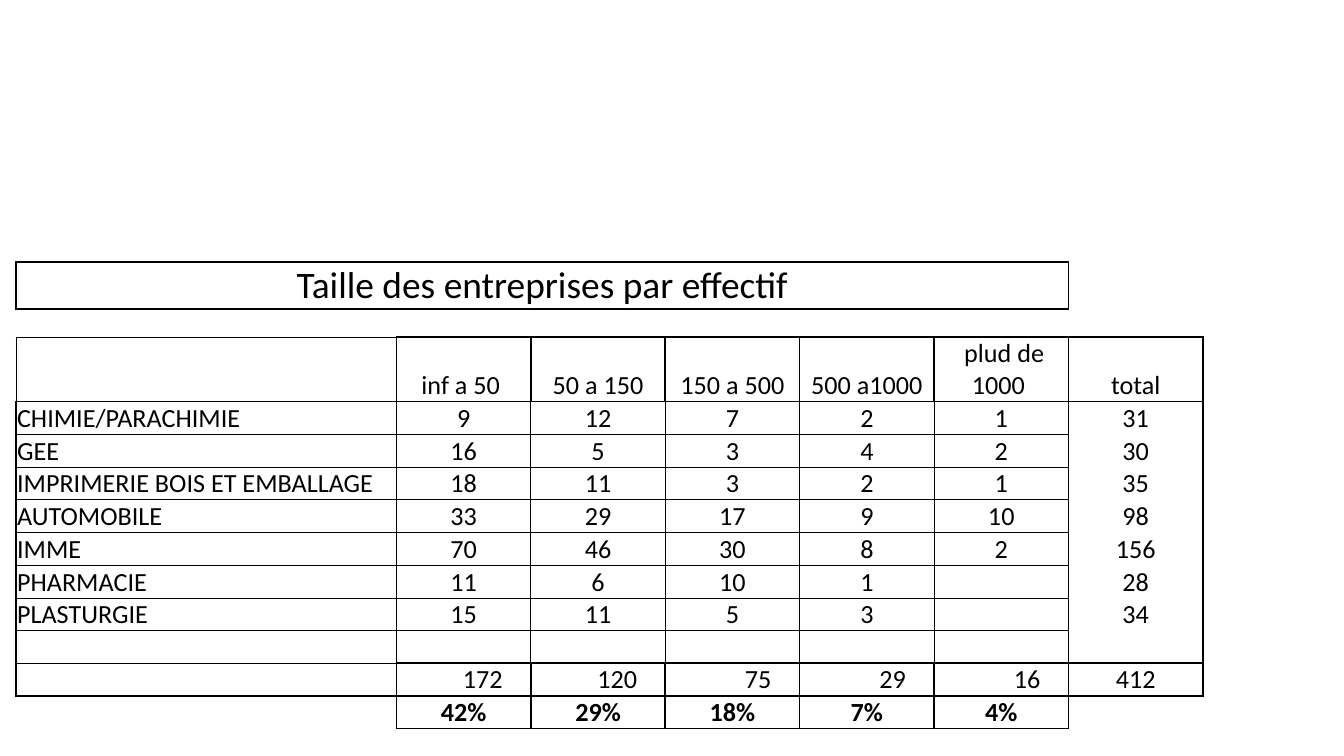
from lxml.etree import SubElement
from pptx import Presentation
from pptx.dml.color import RGBColor
from pptx.enum.text import MSO_ANCHOR, PP_ALIGN
from pptx.oxml.ns import qn
from pptx.util import Inches, Pt

BLACK = RGBColor(0, 0, 0)
THICK, THIN, NONE = 1, 0.5, 0

TITLE = "Taille des entreprises par effectif"
HEADERS = ["", "inf a 50 ", "50 a 150", "150 a 500", "500 a1000", " plud de 1000 ", "total"]
SECTORS = [
    ["CHIMIE/PARACHIMIE", "9", "12", "7", "2", "1", "31"],
    ["GEE", "16", "5", "3", "4", "2", "30"],
    ["IMPRIMERIE BOIS ET EMBALLAGE", "18", "11", "3", "2", "1", "35"],
    ["AUTOMOBILE", "33", "29", "17", "9", "10", "98"],
    ["IMME", "70", "46", "30", "8", "2", "156"],
    ["PHARMACIE", "11", "6", "10", "1", "", "28"],
    ["PLASTURGIE", "15", "11", "5", "3", "", "34"],
]
TOTALS = ["", "172", "120", "75", "29", "16", "412"]
SHARES = ["", "42%", "29%", "18%", "7%", "4%", ""]
EMPTY = [""] * 7
ROWS = [[TITLE] + EMPTY[1:], EMPTY, HEADERS, *SECTORS, EMPTY, TOTALS, SHARES, EMPTY]
TITLE_ROW, HEADER_ROW, TOTALS_ROW, SHARES_ROW = 0, 2, 11, 12
COLUMN_WIDTHS = [2.83] + [1] * 6
ROW_HEIGHTS = [0.34, 0.21, 0.48] + [0.24] * 10 + [0.2]


def vertical_edge(row, edge):
    if row == TITLE_ROW:
        return THICK if edge in (0, 6) else NONE
    if row == HEADER_ROW:
        return THICK if edge else THIN
    if HEADER_ROW < row < TOTALS_ROW:
        return THICK if edge in (0, 6, 7) else THIN
    if row == TOTALS_ROW:
        return THICK
    return THICK if row == SHARES_ROW and 1 <= edge <= 6 else NONE


def horizontal_edge(edge, column):
    if edge <= 1:
        return THICK if column < 6 else NONE
    if edge in (HEADER_ROW, TOTALS_ROW):
        return THICK if column else THIN
    if edge in (HEADER_ROW + 1, SHARES_ROW):
        return THICK
    if edge < TOTALS_ROW:
        return THIN if column < 6 else NONE
    return THICK if edge == SHARES_ROW + 1 and 1 <= column <= 5 else NONE


class SlideBuilder:
    font_name = "Calibri"
    body_size = 14
    title_size = 20
    empty_size = 10

    def __init__(self, presentation):
        self.slide = presentation.slides.add_slide(presentation.slide_layouts[6])

    def add_table(self, left, top, rows):
        shape = self.slide.shapes.add_table(
            len(rows), len(COLUMN_WIDTHS), Inches(left), Inches(top),
            Inches(sum(COLUMN_WIDTHS)), Inches(sum(ROW_HEIGHTS)))
        table = shape.table
        table.first_row = False
        table.horz_banding = False
        for column, width in zip(table.columns, COLUMN_WIDTHS):
            column.width = Inches(width)
        for row, height in zip(table.rows, ROW_HEIGHTS):
            row.height = Inches(height)
        for row, texts in enumerate(rows):
            for column, text in enumerate(texts):
                cell = table.cell(row, column)
                self.style_cell(cell, row, column)
                self.write_cell(cell, text, row, column)
        table.cell(TITLE_ROW, 0).merge(table.cell(TITLE_ROW, 5))

    def style_cell(self, cell, row, column):
        cell.margin_left = cell.margin_right = cell.margin_top = Pt(0.5)
        cell.margin_bottom = 0
        middle = row in (TOTALS_ROW, SHARES_ROW) and column < 6
        cell.vertical_anchor = MSO_ANCHOR.MIDDLE if middle else MSO_ANCHOR.BOTTOM
        self.add_border(cell, "a:lnL", vertical_edge(row, column))
        self.add_border(cell, "a:lnR", vertical_edge(row, column + 1))
        self.add_border(cell, "a:lnT", horizontal_edge(row, column))
        self.add_border(cell, "a:lnB", horizontal_edge(row + 1, column))
        cell.fill.background()

    def add_border(self, cell, tag, width):
        properties = cell._tc.get_or_add_tcPr()
        line = SubElement(properties, qn(tag), w=str(Pt(width)))
        if width:
            fill = SubElement(line, qn("a:solidFill"))
            SubElement(fill, qn("a:srgbClr"), val=str(BLACK))
        else:
            SubElement(line, qn("a:noFill"))

    def write_cell(self, cell, text, row, column):
        paragraph = cell.text_frame.paragraphs[0]
        if not text:
            SubElement(paragraph._p, qn("a:endParaRPr"), sz=str(self.empty_size * 100))
            return
        if row == TOTALS_ROW and column < 6:
            paragraph.alignment = PP_ALIGN.RIGHT
            cell.margin_right = Inches(0.21)
        elif column or row == TITLE_ROW:
            paragraph.alignment = PP_ALIGN.CENTER
        else:
            paragraph.alignment = PP_ALIGN.LEFT
        run = paragraph.add_run()
        run.text = text
        run.font.name = self.font_name
        run.font.size = Pt(self.title_size if row == TITLE_ROW else self.body_size)
        run.font.bold = row == SHARES_ROW
        run.font.color.rgb = BLACK


def main():
    presentation = Presentation()
    presentation.slide_width = Inches(10)
    presentation.slide_height = Inches(10 * 9 / 16)
    builder = SlideBuilder(presentation)
    builder.add_table(0.12, 1.95, ROWS)
    presentation.save("out.pptx")


if __name__ == "__main__":
    main()
